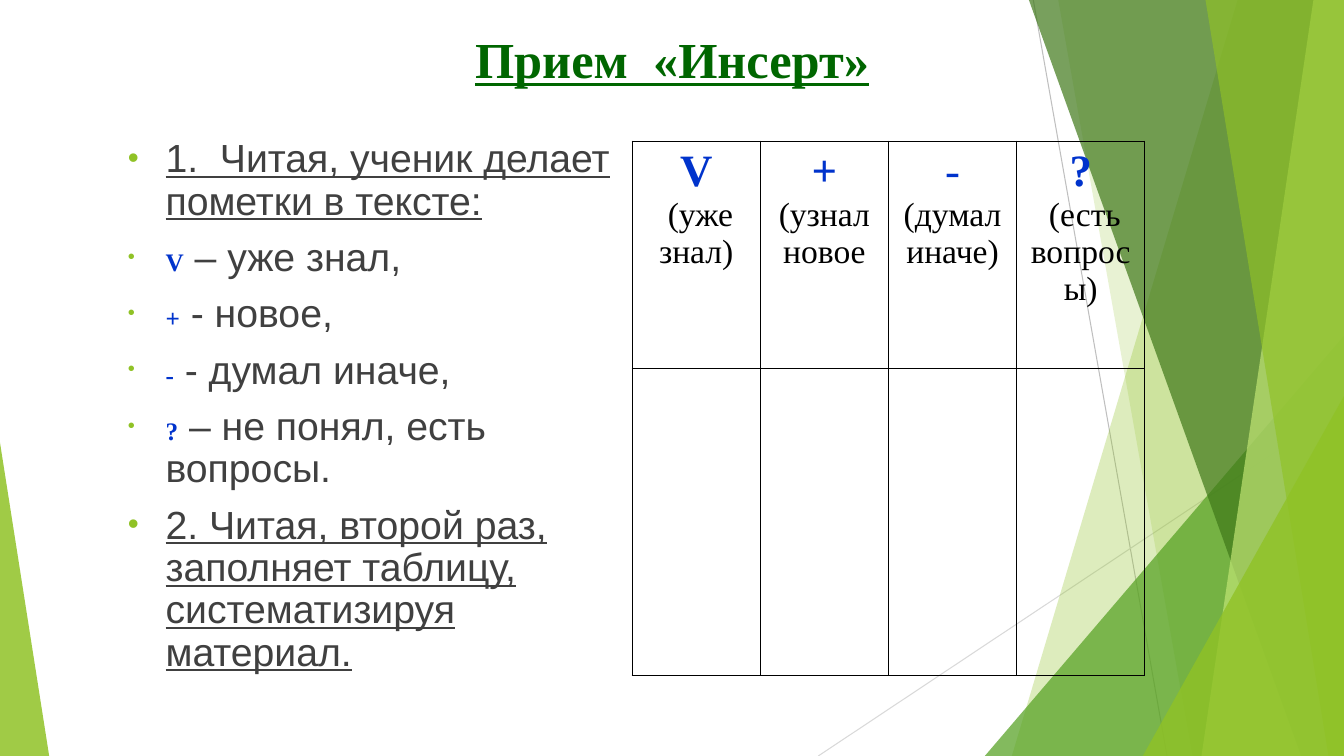
from lxml import etree
from pptx import Presentation, util as u
from pptx.dml import color
from pptx.enum import shapes, text
from pptx.oxml import ns

WIDTH, HEIGHT = 33.87, 19.05
SERIF, SANS = "Times New Roman", "Arial"
GREEN, DARK_GREEN, GREY, BLUE, BLACK = "90C226", "006600", "404040", "0033CC", "000000"


def rgb(value):
    return color.RGBColor.from_string(value)


def add_xml(parent, tag, **attributes):
    return etree.SubElement(parent, ns.qn(tag), attributes)


def add_text(paragraph, words, size=28, font=SANS, colour=GREY, bold=False, underline=False):
    run = paragraph.add_run()
    run.text = words
    run.font.size = u.Pt(size)
    run.font.name = font
    run.font.color.rgb = rgb(colour)
    run.font.bold = bold
    run.font.underline = underline


class LessonSlide:
    """Holds the presentation style and the current slide."""

    def __init__(self):
        self.presentation = Presentation()
        self.presentation.slide_width = u.Cm(WIDTH)
        self.presentation.slide_height = u.Cm(HEIGHT)
        self.slide = self.presentation.slides.add_slide(self.presentation.slide_layouts[1])

    def line(self, start, end, colour):
        points = [u.Cm(value) for value in start + end]
        connector = self.slide.shapes.add_connector(shapes.MSO_CONNECTOR.STRAIGHT, *points)
        connector.line.color.rgb = rgb(colour)
        connector.line.width = u.Pt(0.75)
        add_xml(connector.element.spPr, "a:effectLst")

    def paint(self, shape, colour, opacity):
        shape.shadow.inherit = False
        shape.line.fill.background()
        shape.fill.solid()
        shape.fill.fore_color.rgb = rgb(colour)
        fill_colour = shape.element.spPr.find(".//" + ns.qn("a:srgbClr"))
        add_xml(fill_colour, "a:alpha", val=str(opacity * 1000))

    def band(self, top_x, bottom_x, colour, opacity):
        corners = [(WIDTH, 0), (WIDTH, HEIGHT), (bottom_x, HEIGHT)]
        builder = self.slide.shapes.build_freeform(u.Cm(top_x), 0)
        builder.add_line_segments([(u.Cm(x), u.Cm(y)) for x, y in corners])
        self.paint(builder.convert_to_shape(), colour, opacity)

    def triangle(self, left, width, height, apex, colour, opacity):
        shape = self.slide.shapes.add_shape(
            shapes.MSO_SHAPE.ISOSCELES_TRIANGLE,
            u.Cm(left), u.Cm(HEIGHT - height), u.Cm(width), u.Cm(height))
        shape.adjustments[0] = apex
        self.paint(shape, colour, opacity)

    def place(self, shape, left, top, width, height):
        shape.left, shape.top = u.Cm(left), u.Cm(top)
        shape.width, shape.height = u.Cm(width), u.Cm(height)
        shape.element.getparent().append(shape.element)
        frame = shape.text_frame
        frame.word_wrap = True
        frame.auto_size = text.MSO_AUTO_SIZE.NONE
        frame.vertical_anchor = text.MSO_ANCHOR.TOP
        return frame

    def title(self, words):
        frame = self.place(self.slide.shapes.title, 5.51, 0.58, 22.86, 2.59)
        frame.margin_top = u.Cm(0.14)
        paragraph = frame.paragraphs[0]
        paragraph.alignment = text.PP_ALIGN.CENTER
        add_text(paragraph, words, size=36, font=SERIF, colour=DARK_GREEN,
                 bold=True, underline=True)

    def bullets(self, items):
        frame = self.place(self.slide.placeholders[1], 2.97, 3.37, 13.74, 14.48)
        frame.margin_right = u.Cm(0.8)
        for index, (mark, words) in enumerate(items):
            paragraph = frame.add_paragraph() if index else frame.paragraphs[0]
            paragraph.alignment = text.PP_ALIGN.LEFT
            paragraph.line_spacing = 0.9
            paragraph.space_before = u.Pt(10)
            properties = paragraph._p.get_or_add_pPr()
            properties.set("marL", str(u.Cm(0.95)))
            properties.set("indent", str(u.Cm(-0.95)))
            add_xml(add_xml(properties, "a:buClr"), "a:srgbClr", val=GREEN)
            add_xml(properties, "a:buSzPct", val="80000")
            add_xml(properties, "a:buFont", typeface=SANS)
            add_xml(properties, "a:buChar", char="•")
            if mark:
                add_text(paragraph, mark, size=18, font=SERIF, colour=BLUE, bold=True)
            add_text(paragraph, words, underline=not mark)

    def border(self, cell):
        properties = cell._tc.get_or_add_tcPr()
        for side in ("a:lnL", "a:lnR", "a:lnT", "a:lnB"):
            edge = add_xml(properties, side, w=str(u.Pt(1)))
            add_xml(add_xml(edge, "a:solidFill"), "a:srgbClr", val=BLACK)
        cell.fill.background()

    def table(self, headings, column_width, row_heights):
        table = self.slide.shapes.add_table(
            len(row_heights), len(headings), u.Cm(15.93), u.Cm(3.56),
            u.Cm(column_width * len(headings)), u.Cm(sum(row_heights))).table
        table.first_row = table.horz_banding = False
        for row, height in zip(table.rows, row_heights):
            row.height = u.Cm(height)
        for column in table.columns:
            column.width = u.Cm(column_width)
        for cell in table.iter_cells():
            self.border(cell)
        for cell, (mark, words, same_paragraph) in zip(table.rows[0].cells, headings):
            frame = cell.text_frame
            first = frame.paragraphs[0]
            last = first if same_paragraph else frame.add_paragraph()
            first.alignment = last.alignment = text.PP_ALIGN.CENTER
            add_text(first, mark, size=32, font=SERIF, colour=BLUE, bold=not same_paragraph)
            add_text(last, words, size=24, font=SERIF, colour=BLACK)


def main():
    lesson = LessonSlide()
    lesson.line((26.04, 0), (29.41, HEIGHT), "BFBFBF")
    lesson.line((WIDTH, 10.24), (20.62, HEIGHT), "D9D9D9")
    lesson.band(31.19, 25.5, GREEN, 30)
    lesson.band(26.67, 30.05, GREEN, 20)
    lesson.triangle(24.82, 9.05, 10.59, 1, "54A021", 72)
    lesson.band(25.93, 32.79, "3F7819", 70)
    lesson.band(33.1, 30.28, "C0E474", 70)
    lesson.band(30.38, 33.48, GREEN, 65)
    lesson.triangle(28.8, 5.07, 9.07, 1, GREEN, 80)
    lesson.triangle(0, 1.24, 7.9, 0, GREEN, 85)
    lesson.title("Прием  «Инсерт»")
    lesson.bullets([
        ("", "1.  Читая, ученик делает пометки в тексте:"),
        ("V", " – уже знал,"),
        ("+", " - новое,"),
        ("-", " - думал иначе,"),
        ("?", " – не понял, есть вопросы."),
        ("", "2. Читая, второй раз, заполняет таблицу, систематизируя материал."),
    ])
    lesson.table([
        ("V", " (уже знал)", False),
        ("+", "(узнал новое", False),
        ("- ", "(думал иначе)", True),
        ("?", " (есть вопросы)", False),
    ], 3.23, (5.72, 7.75))
    lesson.presentation.save("out.pptx")


if __name__ == "__main__":
    main()
